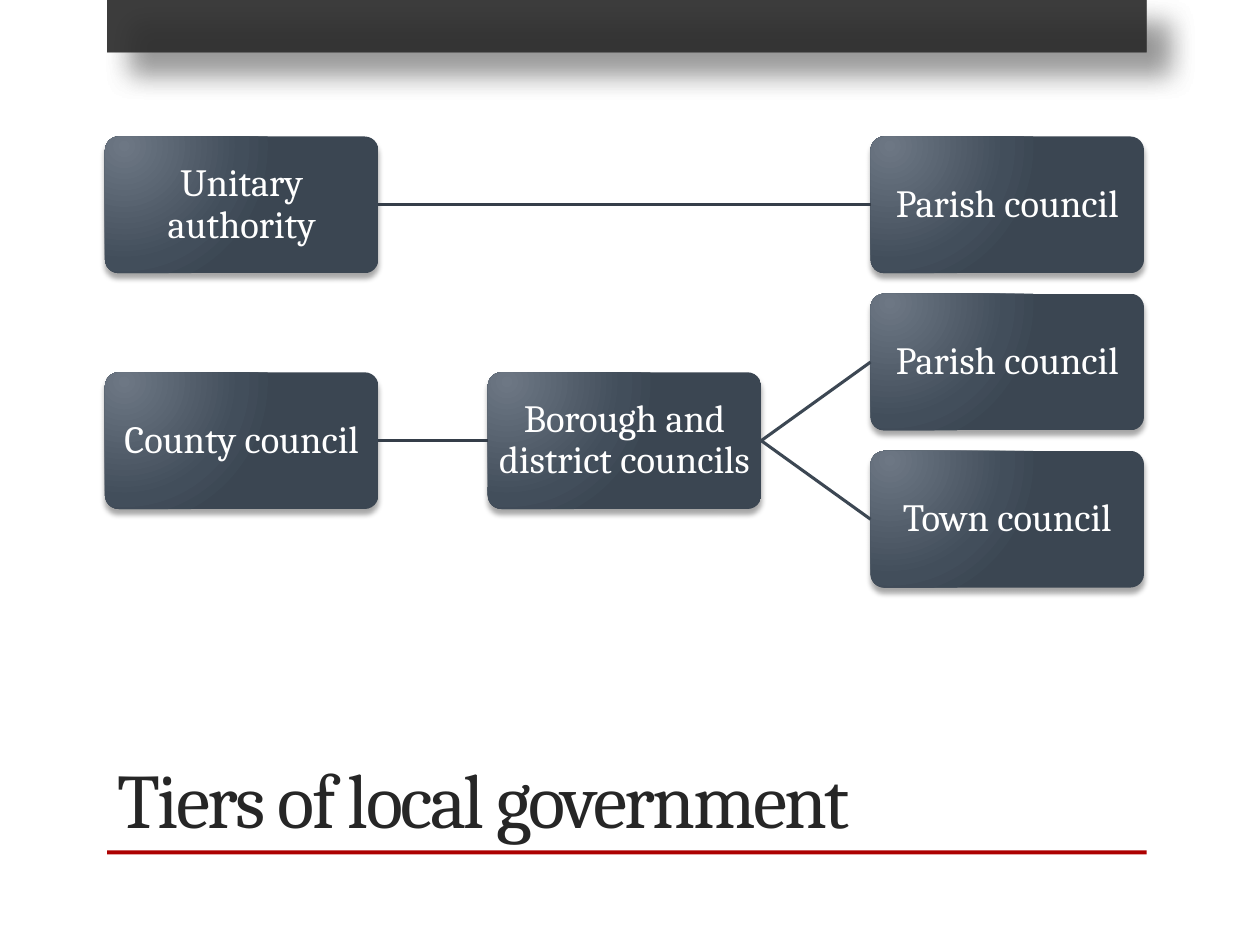
from dataclasses import dataclass

from lxml import etree
from pptx import Presentation
from pptx.dml.color import RGBColor
from pptx.enum.shapes import MSO_CONNECTOR, MSO_SHAPE
from pptx.enum.text import MSO_ANCHOR, MSO_AUTO_SIZE, PP_ALIGN
from pptx.oxml.ns import qn
from pptx.util import Pt

RECTANGLE, ROUNDED = MSO_SHAPE.RECTANGLE, MSO_SHAPE.ROUNDED_RECTANGLE
STRAIGHT = MSO_CONNECTOR.STRAIGHT
LEFT_SIDE, RIGHT_SIDE = 1, 3
FONT = "Cambria"

BOX_WIDTH, BOX_HEIGHT = 156.25, 78.12
FIRST_LEFT, FIRST_TOP = 60, 78
COLUMN_STEP = BOX_WIDTH * 1.4
ROW_STEP = BOX_HEIGHT * 1.15
BOX_STOPS = ((0, "6D7784"), (76, "424E5B"), (100, "3B4652"))


@dataclass(frozen=True)
class Council:
    name: str
    column: int
    row: float


@dataclass(frozen=True)
class Link:
    upper_tier: int
    lower_tier: int
    color: str


@dataclass(frozen=True)
class Shadow:
    """Alpha in percent, blur and distance in points, direction in degrees."""
    alpha: int
    blur: float
    distance: float
    direction: int


COUNCILS = (
    Council("Unitary authority", 0, 0),
    Council("Parish council", 2, 0),
    Council("County council", 0, 1.5),
    Council("Borough and district councils", 1, 1.5),
    Council("Parish council", 2, 1),
    Council("Town council", 2, 2),
)
LINKS = (
    Link(0, 1, "353E49"),
    Link(2, 3, "353E49"),
    Link(3, 4, "3C4753"),
    Link(3, 5, "3C4753"),
)
BAND_SHADOW = Shadow(30, 15, 18, 45)
BOX_SHADOW = Shadow(35, 3, 3, 90)


def rgb(color: str) -> RGBColor:
    return RGBColor.from_string(color)


def add_child(parent, tag: str, **attributes):
    return etree.SubElement(parent, qn(tag), {k: str(v) for k, v in attributes.items()})


def style_font(paragraph, size: float, color: str) -> None:
    for run in paragraph.runs:
        run.font.name = FONT
        run.font.size = Pt(size)
        run.font.color.rgb = rgb(color)


def add_block(slide, kind, left: float, top: float, width: float, height: float, color: str):
    block = slide.shapes.add_shape(kind, Pt(left), Pt(top), Pt(width), Pt(height))
    block.fill.solid()
    block.fill.fore_color.rgb = rgb(color)
    block.line.fill.background()
    block.shadow.inherit = False
    return block


def cast_shadow(block, shadow: Shadow) -> None:
    effects = block._element.spPr.find(qn("a:effectLst"))
    outer = add_child(effects, "a:outerShdw", blurRad=Pt(shadow.blur), dist=Pt(shadow.distance),
                      dir=shadow.direction * 60000, algn="ctr", rotWithShape=0)
    add_child(add_child(outer, "a:srgbClr", val="000000"), "a:alpha", val=shadow.alpha * 1000)


def fill_radial(block) -> None:
    properties = block._element.spPr
    gradient = etree.Element(qn("a:gradFill"), rotWithShape="1")
    stops = add_child(gradient, "a:gsLst")
    for position, color in BOX_STOPS:
        add_child(add_child(stops, "a:gs", pos=position * 1000), "a:srgbClr", val=color)
    circle = add_child(gradient, "a:path", path="circle")
    add_child(circle, "a:fillToRect", l=15000, t=15000, r=100000, b=100000)
    properties.replace(properties.find(qn("a:solidFill")), gradient)


def add_band(slide) -> None:
    band = add_block(slide, RECTANGLE, 61.2, 0, 594, 30, "303030")
    color = band._element.spPr.find(qn("a:solidFill")).find(qn("a:srgbClr"))
    add_child(color, "a:alpha", val=75000)
    cast_shadow(band, BAND_SHADOW)


def add_title(slide) -> None:
    title = slide.shapes.title
    title.left, title.top, title.width, title.height = Pt(60), Pt(417.6), Pt(534), Pt(68.4)
    frame = title.text_frame
    frame.text = "Tiers of local government"
    frame.auto_size = MSO_AUTO_SIZE.NONE
    frame.vertical_anchor = MSO_ANCHOR.BOTTOM
    heading = frame.paragraphs[0]
    heading.alignment = PP_ALIGN.LEFT
    style_font(heading, 44, "262626")
    heading.runs[0].font._element.set("spc", "-150")


def add_council(slide, council: Council):
    box = add_block(slide, ROUNDED, FIRST_LEFT + council.column * COLUMN_STEP,
                    FIRST_TOP + council.row * ROW_STEP, BOX_WIDTH, BOX_HEIGHT, BOX_STOPS[0][1])
    box.adjustments[0] = 0.1
    fill_radial(box)
    cast_shadow(box, BOX_SHADOW)
    frame = box.text_frame
    frame.text = council.name
    frame.word_wrap = True
    frame.vertical_anchor = MSO_ANCHOR.MIDDLE
    frame.margin_left = frame.margin_right = frame.margin_top = frame.margin_bottom = Pt(1.4)
    label = frame.paragraphs[0]
    label.alignment = PP_ALIGN.CENTER
    label.line_spacing = 0.9
    style_font(label, 22, "FFFFFF")
    return box


def add_link(slide, boxes: list, link: Link) -> None:
    connector = slide.shapes.add_connector(STRAIGHT, 0, 0, 0, 0)
    connector.begin_connect(boxes[link.upper_tier], RIGHT_SIDE)
    connector.end_connect(boxes[link.lower_tier], LEFT_SIDE)
    connector.line.color.rgb = rgb(link.color)
    connector.line.width = Pt(1.75)
    add_child(connector._element.spPr, "a:effectLst")


def main() -> None:
    presentation = Presentation()
    presentation.slide_width, presentation.slide_height = Pt(720), Pt(540)
    slide = presentation.slides.add_slide(presentation.slide_layouts[5])
    # Two translucent bands overlap to give the darker tone.
    for _ in range(2):
        add_band(slide)
    add_block(slide, RECTANGLE, 61.2, 486, 594, 2.2, "AD0101")
    add_title(slide)
    boxes = [add_council(slide, council) for council in COUNCILS]
    for link in LINKS:
        add_link(slide, boxes, link)
    presentation.save("out.pptx")


if __name__ == "__main__":
    main()
